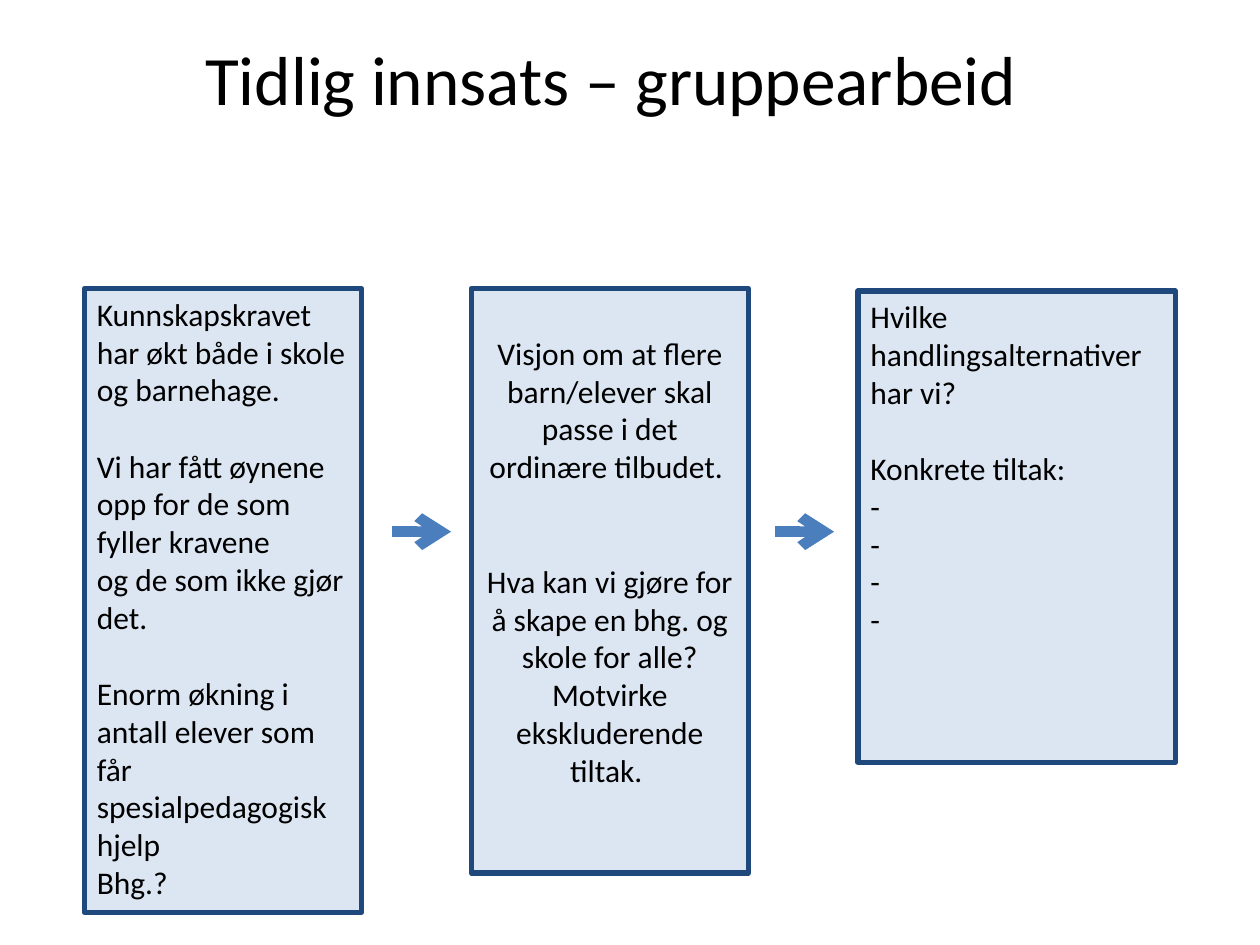
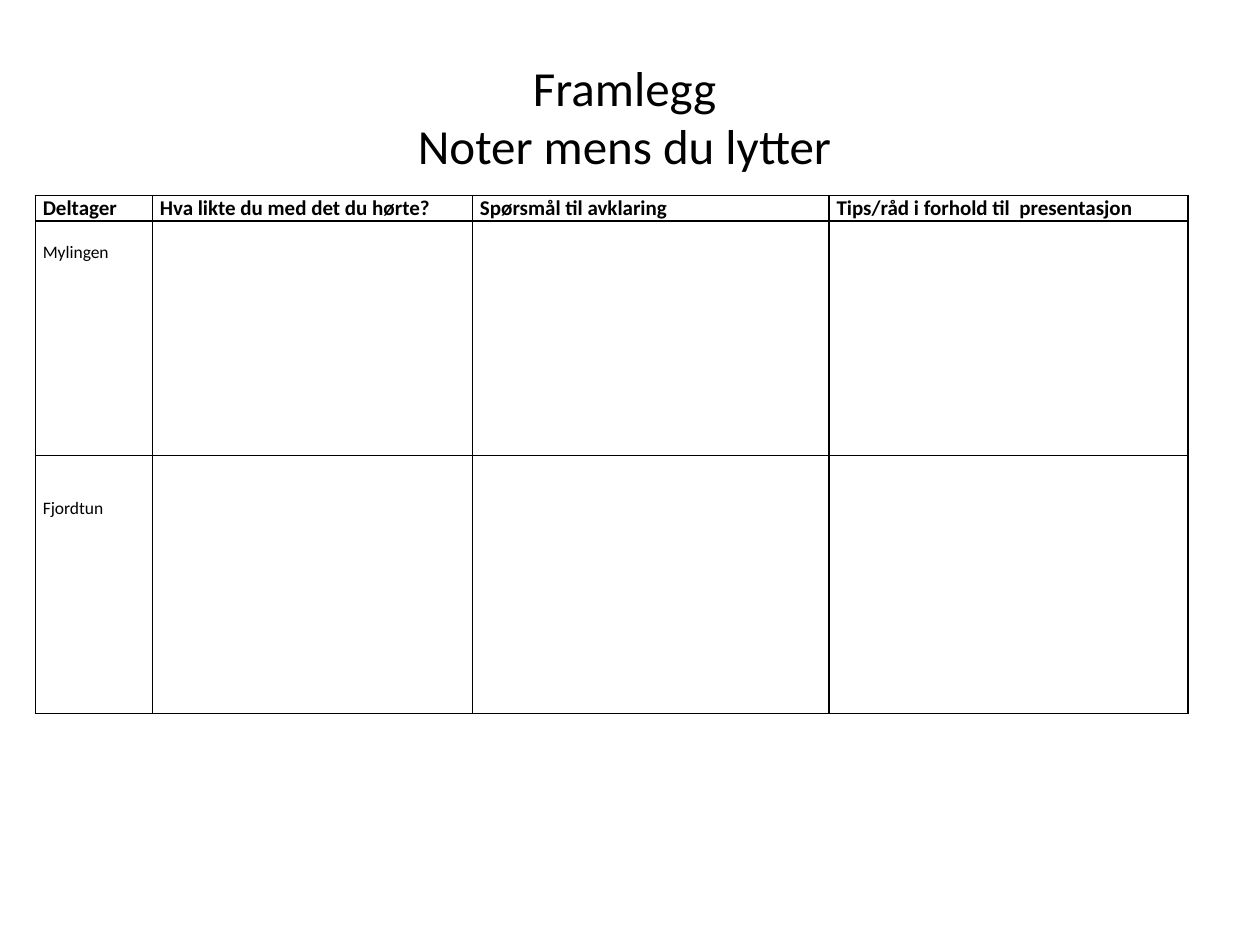
from dataclasses import dataclass

from lxml import etree
from pptx import Presentation
from pptx import util as u
from pptx.dml.color import RGBColor
from pptx.enum import shapes, text
from pptx.oxml import ns


@dataclass(frozen=True)
class Theme:
    font: str = "Calibri"
    ink: str = "000000"
    box_fill: str = "DCE6F2"
    box_line: str = "1F497D"
    arrow: str = "4B7EBC"
    title_size: float = 39.6
    subtitle_size: int = 28
    body_size: int = 18
    header_size: int = 12
    cell_size: int = 10


THEME = Theme()
LINE_HEIGHT = 1.22  # line height as a share of the type size
LEFT, CENTER = text.PP_ALIGN.LEFT, text.PP_ALIGN.CENTER
TOP, MIDDLE = text.MSO_ANCHOR.TOP, text.MSO_ANCHOR.MIDDLE


def write(frame, paragraphs, size, align=LEFT, anchor=TOP, bold=False, wrap=True,
          insets=(0.1, 0.05, 0.1, 0.05)):
    """Fill a frame with (wording, lines of space before) pairs."""
    frame.word_wrap = wrap
    frame.auto_size = text.MSO_AUTO_SIZE.NONE
    frame.vertical_anchor = anchor
    (frame.margin_left, frame.margin_top,
     frame.margin_right, frame.margin_bottom) = map(u.Inches, insets)
    for index, (wording, gap) in enumerate(paragraphs):
        paragraph = frame.add_paragraph() if index else frame.paragraphs[0]
        paragraph.alignment = align
        paragraph.space_before = u.Pt(gap * size * LINE_HEIGHT)
        for row, line in enumerate(wording.split("\n")):
            if row:
                paragraph.add_line_break()
            run = paragraph.add_run()
            run.text = line
            run.font.name, run.font.size, run.font.bold = THEME.font, u.Pt(size), bold
            run.font.color.rgb = RGBColor.from_string(THEME.ink)


class Deck:
    def __init__(self, theme):
        self.theme = theme
        self.file = Presentation()
        self.file.slide_width, self.file.slide_height = u.Inches(10), u.Inches(7.5)
        self.slide = None

    def new_slide(self, title, place, size, **style):
        self.slide = self.file.slides.add_slide(self.file.slide_layouts[5])
        holder = self.slide.shapes.title
        holder.left, holder.top, holder.width, holder.height = map(u.Inches, place)
        write(holder.text_frame, [(title, 0)], size, align=CENTER, **style)

    def box(self, place, paragraphs, **style):
        box = self.slide.shapes.add_shape(shapes.MSO_SHAPE.RECTANGLE, *map(u.Inches, place))
        box.shadow.inherit = False
        box.fill.solid()
        box.fill.fore_color.rgb = RGBColor.from_string(self.theme.box_fill)
        box.line.color.rgb = RGBColor.from_string(self.theme.box_line)
        box.line.width = u.Pt(3)
        write(box.text_frame, paragraphs, self.theme.body_size, **style)

    def arrow(self, left, y, length):
        arrow = self.slide.shapes.add_connector(
            shapes.MSO_CONNECTOR.STRAIGHT, *map(u.Inches, (left, y, left + length, y)))
        arrow.line.color.rgb = RGBColor.from_string(self.theme.arrow)
        arrow.line.width = u.Pt(6)
        properties = arrow.element.spPr
        etree.SubElement(properties.find(ns.qn("a:ln")), ns.qn("a:tailEnd"), type="arrow")
        etree.SubElement(properties, ns.qn("a:effectLst"))

    def border(self, cell):
        properties = cell._tc.get_or_add_tcPr()
        for side in "LRTB":
            line = etree.SubElement(properties, ns.qn(f"a:ln{side}"), w=str(u.Pt(1)))
            fill = etree.SubElement(line, ns.qn("a:solidFill"))
            etree.SubElement(fill, ns.qn("a:srgbClr"), val=self.theme.ink)

    def table(self, left, top, widths, heights, headers, participants):
        size = map(u.Inches, (left, top, sum(widths), sum(heights)))
        table = self.slide.shapes.add_table(len(heights), len(widths), *size).table
        table.first_row = table.horz_banding = False
        for column, width in zip(table.columns, widths):
            column.width = u.Inches(width)
        for row, height in zip(table.rows, heights):
            row.height = u.Inches(height)
        for cell in table.iter_cells():
            self.border(cell)
            cell.fill.background()

        def fill_cell(row, column, wording, size, drop=0, bold=False):
            cell = table.cell(row, column)
            write(cell.text_frame, [(wording, 0)], size, bold=bold)
            cell.vertical_anchor = TOP
            cell.margin_left = cell.margin_right = u.Inches(0.06)
            cell.margin_top, cell.margin_bottom = u.Pt(drop * size * LINE_HEIGHT), 0

        for column, header in enumerate(headers):
            fill_cell(0, column, header, self.theme.header_size, bold=True)
        for row, (name, drop) in enumerate(participants, 1):
            fill_cell(row, 0, name, self.theme.cell_size, drop)


def group_work(deck):
    deck.new_slide("Tidlig innsats – gruppearbeid", (0.35, 0.29, 9, 1.25),
                   THEME.title_size, insets=(0.1, 0, 0.1, 0))
    first, step = 0.67, 3.07

    # Three steps: situation, vision, actions
    deck.box((first, 2.29, 2.2, 4.95), [
        ("Kunnskapskravet har økt både i skole og barnehage.", 0),
        ("Vi har fått øynene opp for de som fyller kravene", 1),
        ("og de som ikke gjør det.", 0),
        ("Enorm økning i antall elever som får spesialpedagogisk hjelp", 1),
        ("Bhg.?", 0),
    ])
    deck.box((first + step, 2.29, 2.2, 4.64), [
        ("Visjon om at flere barn/elever skal passe i det ordinære tilbudet. ", 0),
        ("Hva kan vi gjøre for å skape en bhg. og skole for alle?", 2),
        ("Motvirke ekskluderende tiltak. ", 0),
    ], align=CENTER, insets=(0.1, 0.36, 0.1, 0.05))
    deck.box((first + 2 * step, 2.31, 2.52, 3.74), [
        ("Hvilke handlingsalternativer", 0),
        ("har vi?", 0),
        ("Konkrete tiltak:", 1),
        *[("-", 0)] * 4,
    ])

    # Arrows between the steps
    for left in (3.11, 6.15):
        deck.arrow(left, 4.22, 0.47)


def listening_notes(deck):
    deck.new_slide("Framlegg \nNoter mens du lytter ", (3.19, 0.4, 3.62, 1.04),
                   THEME.subtitle_size, anchor=MIDDLE, wrap=False)

    # Form for notes, one row per participant
    deck.table(
        0.28, 1.55, widths=(0.93, 2.54, 2.83, 2.85), heights=(0.2, 1.86, 2.05),
        headers=("Deltager", "Hva likte du med det du hørte?",
                 "Spørsmål til avklaring", "Tips/råd i forhold til  presentasjon"),
        participants=(("Mylingen", 1), ("Fjordtun", 2)))


def main():
    deck = Deck(THEME)
    group_work(deck)
    listening_notes(deck)
    deck.file.save("out.pptx")


if __name__ == "__main__":
    main()
